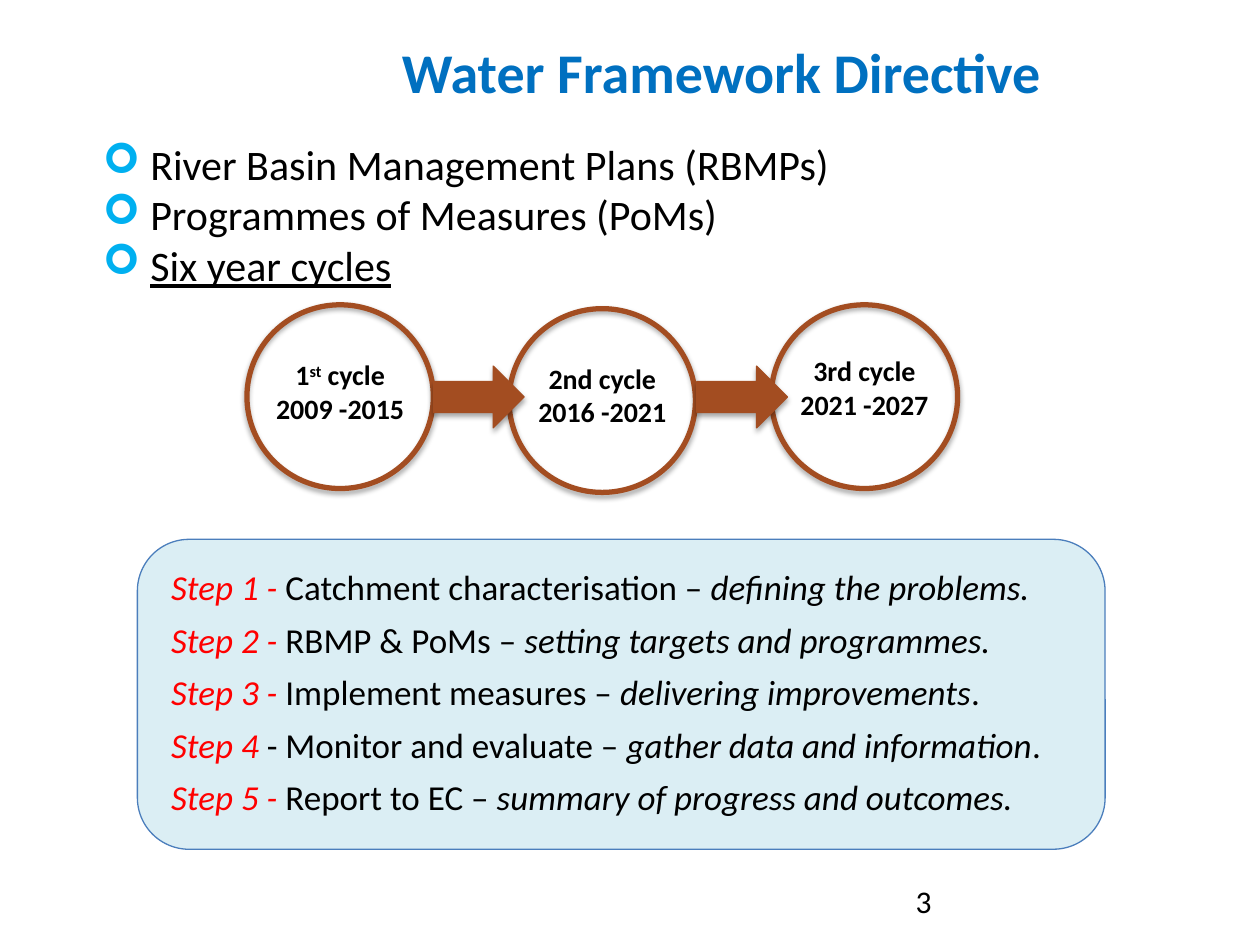
from lxml.etree import SubElement
from pptx import Presentation
from pptx.dml.color import RGBColor
from pptx.enum.shapes import MSO_SHAPE as Shape
from pptx.enum.text import MSO_AUTO_SIZE as AutoSize, PP_ALIGN as Align
from pptx.oxml.ns import qn
from pptx.util import Pt

TITLE = "Water Framework Directive"
PAGE_NUMBER = "3"
TOPICS = [
    ("River Basin Management Plans (RBMPs)", {}),
    ("Programmes of Measures (PoMs)", {}),
    ("Six year cycles", {"underline": True}),
]
# Circle top, label top, first line as (text, baseline shift), years
CYCLES = [
    (174.2, 200.9, [("1", 0), ("st", 30000), (" cycle", 0)], "2009 -2015"),
    (176.4, 203, [("2nd cycle", 0)], "2016 -2021"),
    (174.2, 198.7, [("3rd cycle", 0)], "2021 -2027"),
]
# Step, action, purpose, closing mark
STEPS = [
    ("Step 1 -", " Catchment characterisation – ", "defining the problems.", ""),
    ("Step 2 - ", "RBMP & PoMs – ", "setting targets and programmes.", ""),
    ("Step 3 - ", "Implement measures – ", "delivering improvements", "."),
    ("Step 4 ", "- Monitor and evaluate – ", "gather data and information", "."),
    ("Step 5 - ", "Report to EC – ", "summary of progress and outcomes.", ""),
]
THEME = {
    "font": "Calibri",
    "title": "0070C0", "text": "000000", "step": "FF0000", "bullet": "00B0F0",
    "cycle": "A34D21", "panel": "DBEEF4", "panel_line": "4B7EBC",
    "title_size": 32, "topic_size": 24, "step_size": 20,
    "number_size": 18, "cycle_size": 16,
}
CIRCLE_LEFT, CIRCLE_PITCH = 141.1, 149.8
CIRCLE_SIZE = (106.5, 105)
LABEL_INSET = 6.5
ARROW_LEFT, ARROW_PITCH, ARROW_TOP = 247.7, 150.5, 209.2
ARROW_SIZE = (51.8, 35.3)


def add_shape(page, kind, bounds, fill, line, width, shadow=False):
    shape = page.shapes.add_shape(kind, *map(Pt, bounds))
    shape.shadow.inherit = False
    if fill:
        shape.fill.solid()
        shape.fill.fore_color.rgb = RGBColor.from_string(THEME[fill])
    else:
        shape.fill.background()
    shape.line.color.rgb = RGBColor.from_string(THEME[line])
    shape.line.width = Pt(width)
    if shadow:
        add_shadow(shape)


def add_shadow(shape):
    """Give the shape a soft black shadow straight below it."""
    effects = shape._element.spPr.find(qn("a:effectLst"))
    outer = SubElement(effects, qn("a:outerShdw"), blurRad=str(Pt(3.1)),
                       dist=str(Pt(1.8)), dir="5400000", rotWithShape="0")
    color = SubElement(outer, qn("a:srgbClr"), val="000000")
    SubElement(color, qn("a:alpha"), val="35000")


def add_text_frame(page, bounds, auto_size=AutoSize.SHAPE_TO_FIT_TEXT):
    frame = page.shapes.add_textbox(*map(Pt, bounds)).text_frame
    frame.word_wrap = True
    frame.auto_size = auto_size
    return frame


def next_para(frame, index):
    return frame.add_paragraph() if index else frame.paragraphs[0]


def add_span(para, text, size, color="text", **formats):
    span = para.add_run()
    span.text = text
    span.font.color.rgb = RGBColor.from_string(THEME[color])
    values = {"name": THEME["font"], "size": Pt(THEME[size]), **formats}
    for name, value in values.items():
        setattr(span.font, name, value)
    return span


def add_bullet(para):
    props = para._p.get_or_add_pPr()
    props.set("marL", str(Pt(27)))
    props.set("indent", str(-Pt(27)))
    color = SubElement(props, qn("a:buClr"))
    SubElement(color, qn("a:srgbClr"), val=THEME["bullet"])
    SubElement(props, qn("a:buFont"), typeface="Wingdings")
    SubElement(props, qn("a:buChar"), char="➢")


def add_cycles(page):
    for index, (top, label_top, name, years) in enumerate(CYCLES):
        left = CIRCLE_LEFT + index * CIRCLE_PITCH
        add_shape(page, Shape.OVAL, (left, top, *CIRCLE_SIZE),
                  None, "cycle", 3, shadow=True)
        frame = add_text_frame(page, (left + LABEL_INSET, label_top, 93.6, 46))
        for row, parts in enumerate([name, [(years, 0)]]):
            para = next_para(frame, row)
            para.alignment = Align.CENTER
            for text, shift in parts:
                span = add_span(para, text, "cycle_size", bold=True)
                if shift:
                    span.font._element.set("baseline", str(shift))
    for index in range(len(CYCLES) - 1):
        left = ARROW_LEFT + index * ARROW_PITCH
        add_shape(page, Shape.RIGHT_ARROW, (left, ARROW_TOP, *ARROW_SIZE),
                  "cycle", "cycle", 0.75, shadow=True)


def add_topics(page):
    frame = add_text_frame(page, (51.8, 75.6, 477.4, 94.3))
    for index, (text, formats) in enumerate(TOPICS):
        para = next_para(frame, index)
        add_bullet(para)
        add_span(para, text, "topic_size", **formats)


def add_steps(page):
    add_shape(page, Shape.ROUNDED_RECTANGLE, (78.5, 308.2, 553, 177.1),
              "panel", "panel_line", 0.75)
    frame = add_text_frame(page, (90.7, 319.7, 541.4, 180.7))
    for index, (step, action, purpose, mark) in enumerate(STEPS):
        para = next_para(frame, index)
        para.space_after = Pt(6)
        add_span(para, step, "step_size", "step", italic=True)
        add_span(para, action, "step_size")
        add_span(para, purpose, "step_size", italic=True)
        if mark:
            add_span(para, mark, "step_size")


def main():
    deck = Presentation()
    deck.slide_width, deck.slide_height = Pt(720), Pt(540)
    page = deck.slides.add_slide(deck.slide_layouts[6])
    add_steps(page)
    add_cycles(page)
    add_topics(page)
    title = add_text_frame(page, (222.5, 18, 401.8, 46))
    add_span(title.paragraphs[0], TITLE, "title_size", "title", bold=True)
    number = add_text_frame(page, (516.2, 500.4, 167.8, 28.8), AutoSize.NONE)
    add_span(number.paragraphs[0], PAGE_NUMBER, "number_size")
    deck.save("out.pptx")


if __name__ == "__main__":
    main()
